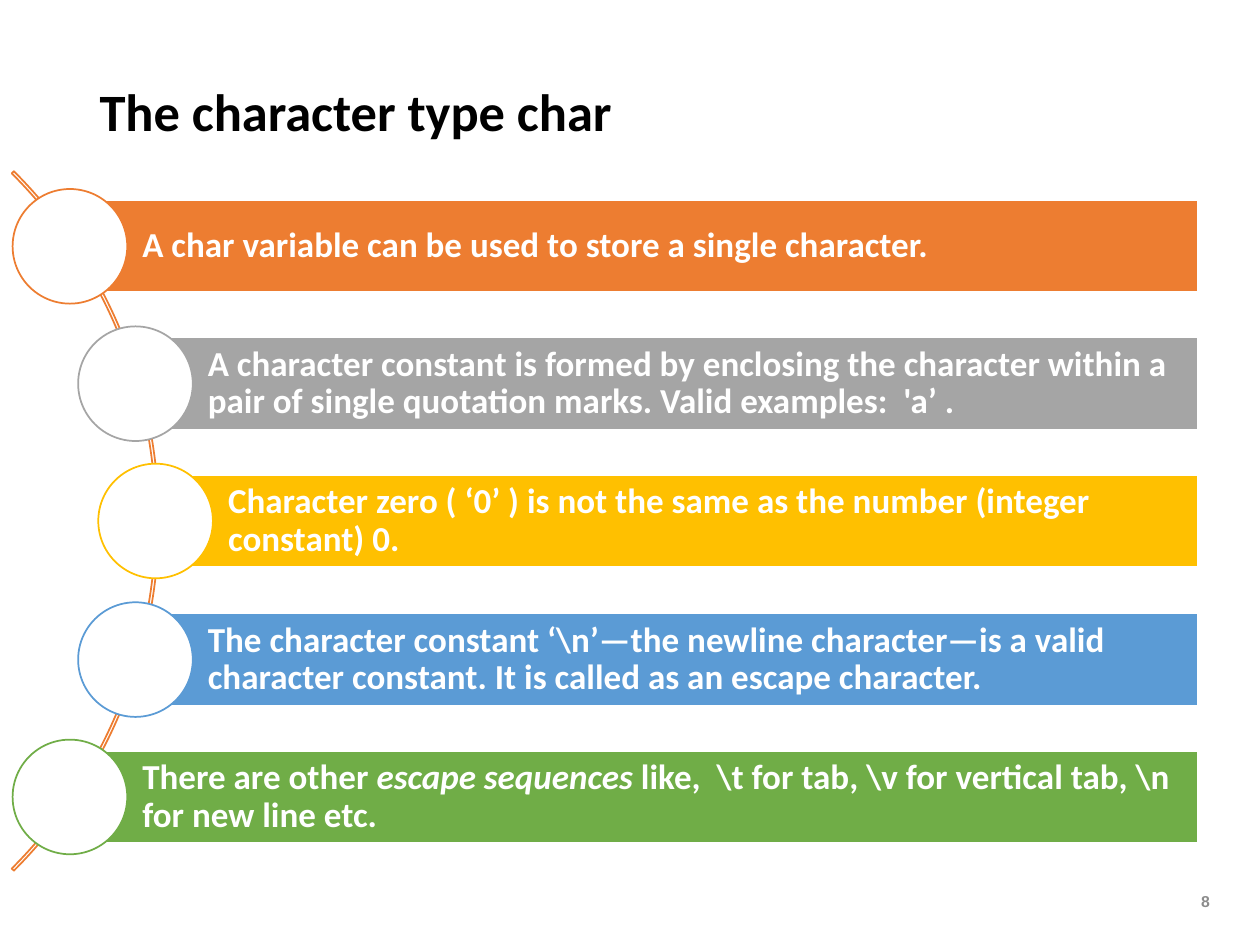
from dataclasses import dataclass

from pptx import Presentation
from pptx.dml.color import RGBColor
from pptx.enum.shapes import MSO_SHAPE
from pptx.enum.text import MSO_ANCHOR, MSO_AUTO_SIZE, PP_ALIGN
from pptx.shapes.autoshape import Shape
from pptx.shapes.shapetree import GroupShapes
from pptx.text.text import _Paragraph as Paragraph
from pptx.util import Emu, Pt

EMU_PER_PX = 9144
WHITE = RGBColor(0xFF, 0xFF, 0xFF)
BLACK = RGBColor(0x00, 0x00, 0x00)
MUTED = RGBColor(0x8C, 0x8C, 0x8C)
ORANGE = RGBColor(0xED, 0x7D, 0x31)
GRAY = RGBColor(0xA5, 0xA5, 0xA5)
GOLD = RGBColor(0xFF, 0xC0, 0x00)
BLUE = RGBColor(0x5B, 0x9B, 0xD5)
GREEN = RGBColor(0x70, 0xAD, 0x47)

BAR_RIGHT = 951
BAR_HEIGHT = 73
FIRST_BAR_TOP = 159
BAR_PITCH = 109.25
CIRCLE_SIZE = 91


@dataclass(frozen=True)
class Span:
    text: str
    italic: bool = False


@dataclass(frozen=True)
class Point:
    left: int
    color: RGBColor
    spans: tuple[Span, ...]


POINTS = (
    Point(55, ORANGE, (Span("A char variable can be used to store a single character."),)),
    Point(107, GRAY, (Span(
        "A character constant is formed by enclosing the character within a "
        "pair of single quotation marks. Valid examples:  'a’ ."),)),
    Point(123, GOLD, (Span(
        "Character zero ( ‘0’ ) is not the same as the number (integer constant) 0."),)),
    Point(107, BLUE, (Span(
        r"The character constant ‘\n’—the newline character—is a valid "
        "character constant. It is called as an escape character."),)),
    Point(55, GREEN, (
        Span("There are other "),
        Span("escape sequences", italic=True),
        Span(r" like,  \t for tab, \v for vertical tab, \n for new line etc."),
    )),
)


def px(value: int) -> Emu:
    return Emu(value * EMU_PER_PX)


def set_font(paragraph: Paragraph, name: str, size: int, color: RGBColor) -> None:
    paragraph.font.name = name
    paragraph.font.size = Pt(size)
    paragraph.font.bold = True
    paragraph.font.color.rgb = color


def add_outlined(shapes: GroupShapes, kind: MSO_SHAPE, left: int, top: int,
                 width: int, height: int, line: RGBColor) -> Shape:
    shape = shapes.add_shape(kind, px(left), px(top), px(width), px(height))
    shape.shadow.inherit = False
    shape.line.color.rgb = line
    shape.line.width = Pt(1)
    return shape


def add_arc(shapes: GroupShapes) -> None:
    arc = add_outlined(shapes, MSO_SHAPE.BLOCK_ARC, -659, 21, 785, 785, ORANGE)
    arc.fill.background()
    for index, value in enumerate((189, 27, 0.003)):
        arc.adjustments[index] = value


def add_point(shapes: GroupShapes, point: Point, top: int) -> None:
    bar = add_outlined(shapes, MSO_SHAPE.RECTANGLE, point.left, top,
                       BAR_RIGHT - point.left, BAR_HEIGHT, WHITE)
    bar.fill.solid()
    bar.fill.fore_color.rgb = point.color
    frame = bar.text_frame
    frame.word_wrap = True
    frame.vertical_anchor = MSO_ANCHOR.MIDDLE
    frame.margin_left = px(58)
    frame.margin_right = frame.margin_top = frame.margin_bottom = px(6)
    para = frame.paragraphs[0]
    para.alignment = PP_ALIGN.LEFT
    para.line_spacing = 0.9
    set_font(para, "Calibri", 20, WHITE)
    for span in point.spans:
        run = para.add_run()
        run.text = span.text
        if span.italic:
            run.font.italic = True

    circle = add_outlined(shapes, MSO_SHAPE.OVAL, point.left - CIRCLE_SIZE // 2,
                          top - (CIRCLE_SIZE - BAR_HEIGHT) // 2,
                          CIRCLE_SIZE, CIRCLE_SIZE, point.color)
    circle.fill.solid()
    circle.fill.fore_color.rgb = WHITE


def set_title(title: Shape, text: str) -> None:
    title.left, title.top, title.width, title.height = px(69), px(56), px(902), px(69)
    frame = title.text_frame
    frame.text = text
    frame.auto_size = MSO_AUTO_SIZE.NONE
    frame.vertical_anchor = MSO_ANCHOR.MIDDLE
    para = frame.paragraphs[0]
    para.alignment = PP_ALIGN.LEFT
    para.line_spacing = 0.9
    set_font(para, "Calibri", 30, BLACK)


def main() -> None:
    deck = Presentation()
    deck.slide_width, deck.slide_height = px(1000), px(750)
    page = deck.slides.add_slide(deck.slide_layouts[5])
    set_title(page.shapes.title, "The character type char")

    number_box = page.shapes.add_textbox(px(931), px(695), px(39), px(40))
    number_box.text_frame.word_wrap = True
    number_box.text_frame.vertical_anchor = MSO_ANCHOR.MIDDLE
    para = number_box.text_frame.paragraphs[0]
    para.text = "8"
    para.alignment = PP_ALIGN.RIGHT
    set_font(para, "Arial", 9, MUTED)

    diagram = page.shapes.add_group_shape().shapes
    add_arc(diagram)
    for index, point in enumerate(POINTS):
        add_point(diagram, point, FIRST_BAR_TOP + round(index * BAR_PITCH))

    deck.save("out.pptx")


if __name__ == "__main__":
    main()
